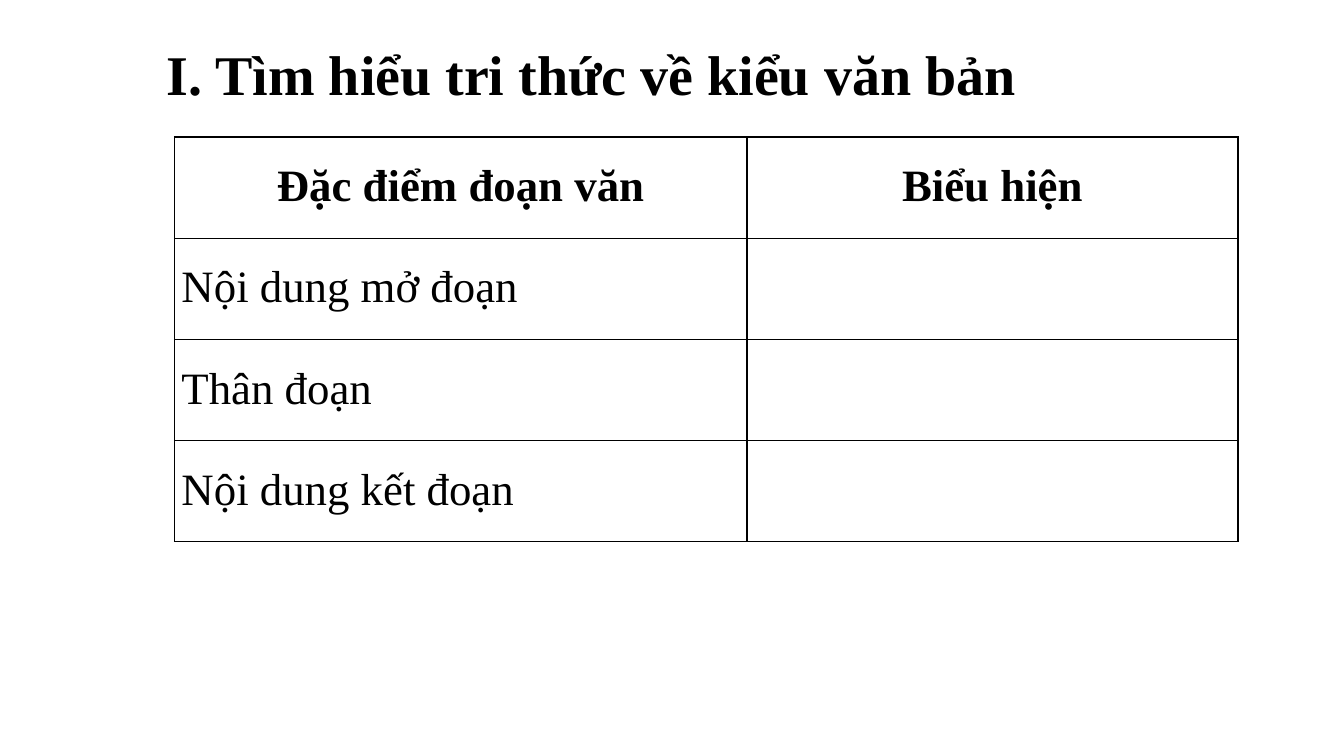
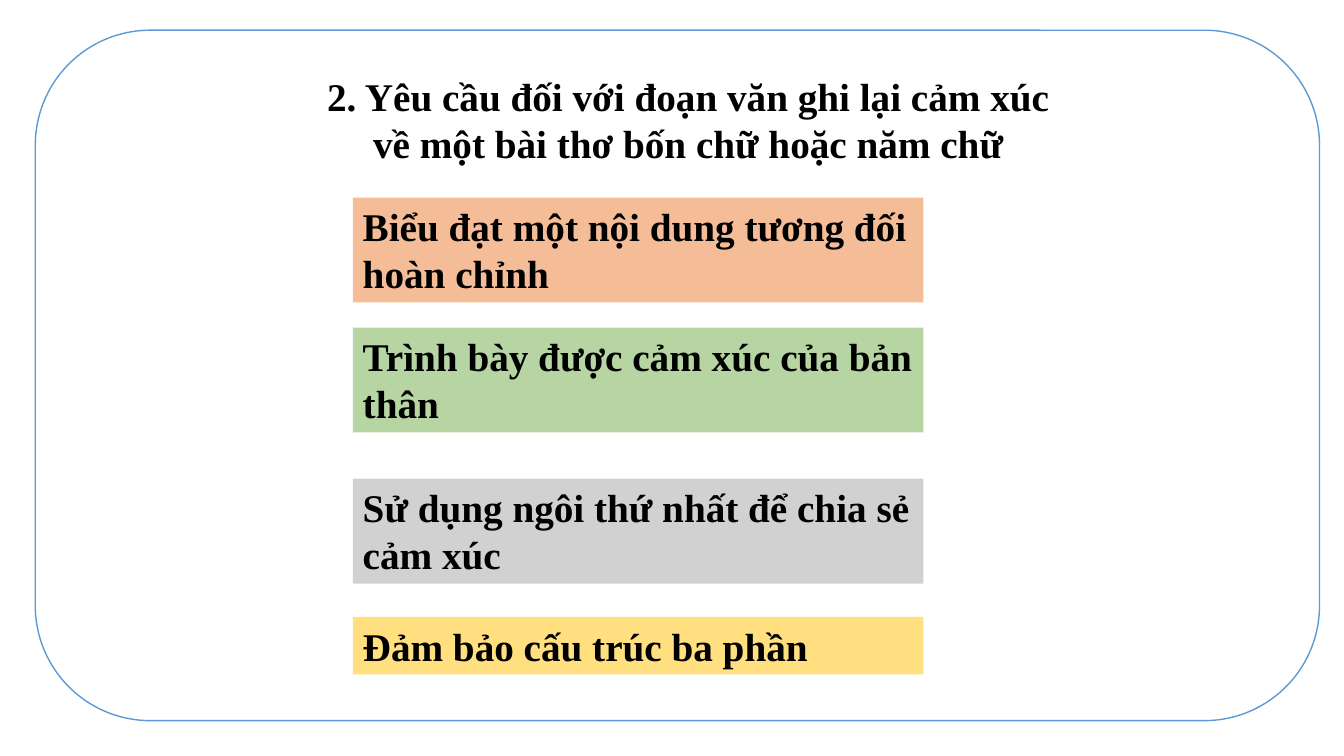
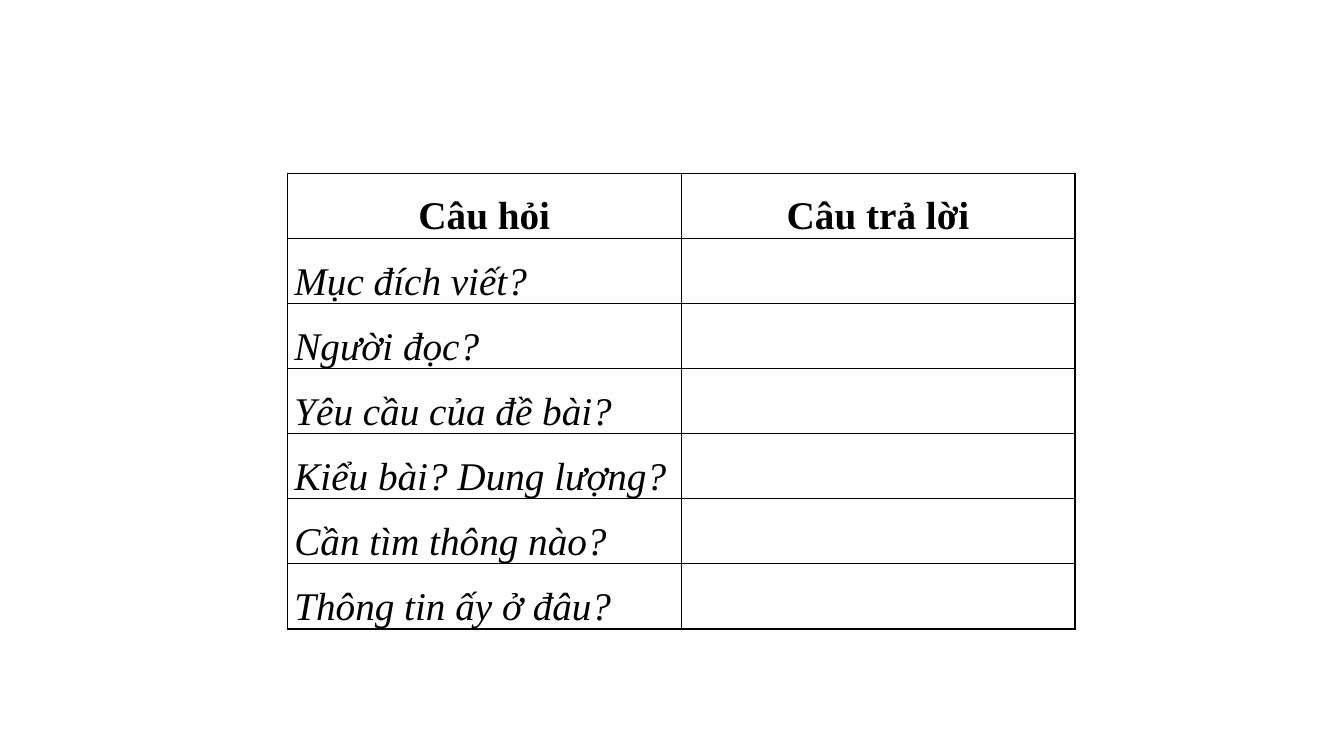
from dataclasses import dataclass

from lxml import etree
from pptx import Presentation
from pptx.dml.color import RGBColor
from pptx.enum.shapes import MSO_SHAPE
from pptx.enum.text import MSO_ANCHOR, MSO_AUTO_SIZE, PP_ALIGN
from pptx.oxml.ns import qn
from pptx.util import Inches, Pt

LEFT, CENTER, JUSTIFY = PP_ALIGN.LEFT, PP_ALIGN.CENTER, PP_ALIGN.JUSTIFY
TOP = MSO_ANCHOR.TOP
FIXED_SIZE = MSO_AUTO_SIZE.NONE
RECTANGLE, ROUNDED = MSO_SHAPE.RECTANGLE, MSO_SHAPE.ROUNDED_RECTANGLE
TITLE_ONLY, BLANK = 5, 6


@dataclass(frozen=True)
class Theme:
    font: str = "Times New Roman"
    ink: str = "000000"
    paper: str = "FFFFFF"
    frame: str = "5B9BD5"
    orange: str = "ED7D31"
    green: str = "70AD47"
    gray: str = "A5A5A5"
    gold: str = "FFC000"
    heading: int = 40
    large: int = 32
    normal: int = 28
    rule: int = 1
    cell_spacing: float = 1.5
    card_opacity: int = 50


THEME = Theme()


class Deck:
    """Holds the theme and the current slide; lengths are percent of the slide."""

    def __init__(self, theme):
        self.theme = theme
        self.presentation = Presentation()
        self.presentation.slide_width = Inches(13.33)
        self.presentation.slide_height = Inches(7.5)
        self.slide = None

    def x(self, percent):
        return round(self.presentation.slide_width * percent / 100)

    def y(self, percent):
        return round(self.presentation.slide_height * percent / 100)

    def box(self, left, top, width, height):
        return self.x(left), self.y(top), self.x(width), self.y(height)

    def new_slide(self, layout):
        layouts = self.presentation.slide_layouts
        self.slide = self.presentation.slides.add_slide(layouts[layout])

    def set_text(self, frame, text, size, align, bold=True, italic=False):
        frame.text = text
        frame.word_wrap = True
        paragraph = frame.paragraphs[0]
        paragraph.alignment = align
        for run in paragraph.runs:
            run.font.name = self.theme.font
            run.font.size = Pt(size)
            run.font.bold = bold
            run.font.italic = italic
            run.font.color.rgb = RGBColor.from_string(self.theme.ink)
        return paragraph

    def title(self, text, area, size):
        title = self.slide.shapes.title
        title.left, title.top, title.width, title.height = self.box(*area)
        self.set_text(title.text_frame, text, size, CENTER)
        title.text_frame.vertical_anchor = TOP
        title.text_frame.auto_size = FIXED_SIZE

    def filled(self, outline, area, color):
        shape = self.slide.shapes.add_shape(outline, *self.box(*area))
        shape.shadow.inherit = False
        shape.fill.solid()
        shape.fill.fore_color.rgb = RGBColor.from_string(color)
        return shape

    def frame(self, area):
        """Draw the rounded page frame behind the title."""
        border = self.filled(ROUNDED, area, self.theme.paper)
        border.line.color.rgb = RGBColor.from_string(self.theme.frame)
        border.line.width = Pt(self.theme.rule)
        self.slide.shapes.title.element.addprevious(border.element)

    def card(self, text, area, color):
        card = self.filled(RECTANGLE, area, color)
        card.line.fill.background()
        tint = card.element.spPr.find(qn("a:solidFill"))[0]
        etree.SubElement(tint, qn("a:alpha"), val=str(self.theme.card_opacity * 1000))
        self.set_text(card.text_frame, text, self.theme.normal, LEFT)
        card.text_frame.vertical_anchor = TOP

    def table(self, headers, labels, left, top, widths, row_height, size,
              label_align, italic=False):
        """Draw a two-column table whose second column is left to fill in."""
        rows = [headers] + [(label, "") for label in labels]
        area = self.box(left, top, sum(widths), row_height * len(rows))
        table = self.slide.shapes.add_table(len(rows), len(headers), *area).table
        table.first_row = table.horz_banding = False
        for column, width in zip(table.columns, widths):
            column.width = self.x(width)
        for index, texts in enumerate(rows):
            table.rows[index].height = self.y(row_height)
            is_header = index == 0
            for cell, text in zip(table.rows[index].cells, texts):
                self.style_cell(cell)
                if text:
                    paragraph = self.set_text(
                        cell.text_frame, text, size,
                        CENTER if is_header else label_align,
                        bold=is_header, italic=italic and not is_header)
                    paragraph.line_spacing = self.theme.cell_spacing

    def style_cell(self, cell):
        cell.margin_left = cell.margin_right = Inches(0.07)
        cell.margin_top = cell.margin_bottom = 0
        cell.fill.background()
        properties = cell._tc.tcPr
        for position, side in enumerate("LRTB"):
            edge = etree.Element(qn(f"a:ln{side}"), w=str(Pt(self.theme.rule)))
            paint = etree.SubElement(edge, qn("a:solidFill"))
            etree.SubElement(paint, qn("a:srgbClr"), val=self.theme.ink)
            properties.insert(position, edge)


def paragraph_features(deck):
    deck.new_slide(TITLE_ONLY)
    deck.title("I. Tìm hiểu tri thức về kiểu văn bản",
               (10.05, 4.53, 67.88, 10.27), THEME.heading)
    deck.table(("Đặc điểm đoạn văn", "Biểu hiện"),
               ("Nội dung mở đoạn", "Thân đoạn", "Nội dung kết đoạn"),
               12.98, 18.13, (42.6, 36.53), 13.37, THEME.large, LEFT)


def requirements(deck):
    deck.new_slide(TITLE_ONLY)
    deck.frame((2.63, 4, 95.55, 91.33))
    deck.title("2. Yêu cầu đối với đoạn văn ghi lại cảm xúc "
               "về một bài thơ bốn chữ hoặc năm chữ",
               (22.13, 8.93, 58.13, 13.87), THEME.normal)
    one_line, two_lines = 7.6, 13.87
    cards = (
        ("Biểu đạt một nội dung tương đối hoàn chỉnh", 26.13, two_lines, THEME.orange),
        ("Trình bày được cảm xúc của bản thân", 43.33, two_lines, THEME.green),
        ("Sử dụng ngôi thứ nhất để chia sẻ cảm xúc", 63.33, two_lines, THEME.gray),
        ("Đảm bảo cấu trúc ba phần", 81.6, one_line, THEME.gold),
    )
    for text, top, height, color in cards:
        deck.card(text, (26.25, top, 42.45, height), color)


def questions(deck):
    deck.new_slide(BLANK)
    deck.table(("Câu hỏi", "Câu trả lời"),
               ("Mục đích viết?", "Người đọc?", "Yêu cầu của đề bài?",
                "Kiểu bài? Dung lượng?", "Cần tìm thông nào?",
                "Thông tin ấy ở đâu?"),
               21.38, 22.93, (29.3, 29.3), 8.2, THEME.normal, JUSTIFY, italic=True)


def main():
    deck = Deck(THEME)
    paragraph_features(deck)
    requirements(deck)
    questions(deck)
    deck.presentation.save("out.pptx")


if __name__ == "__main__":
    main()
